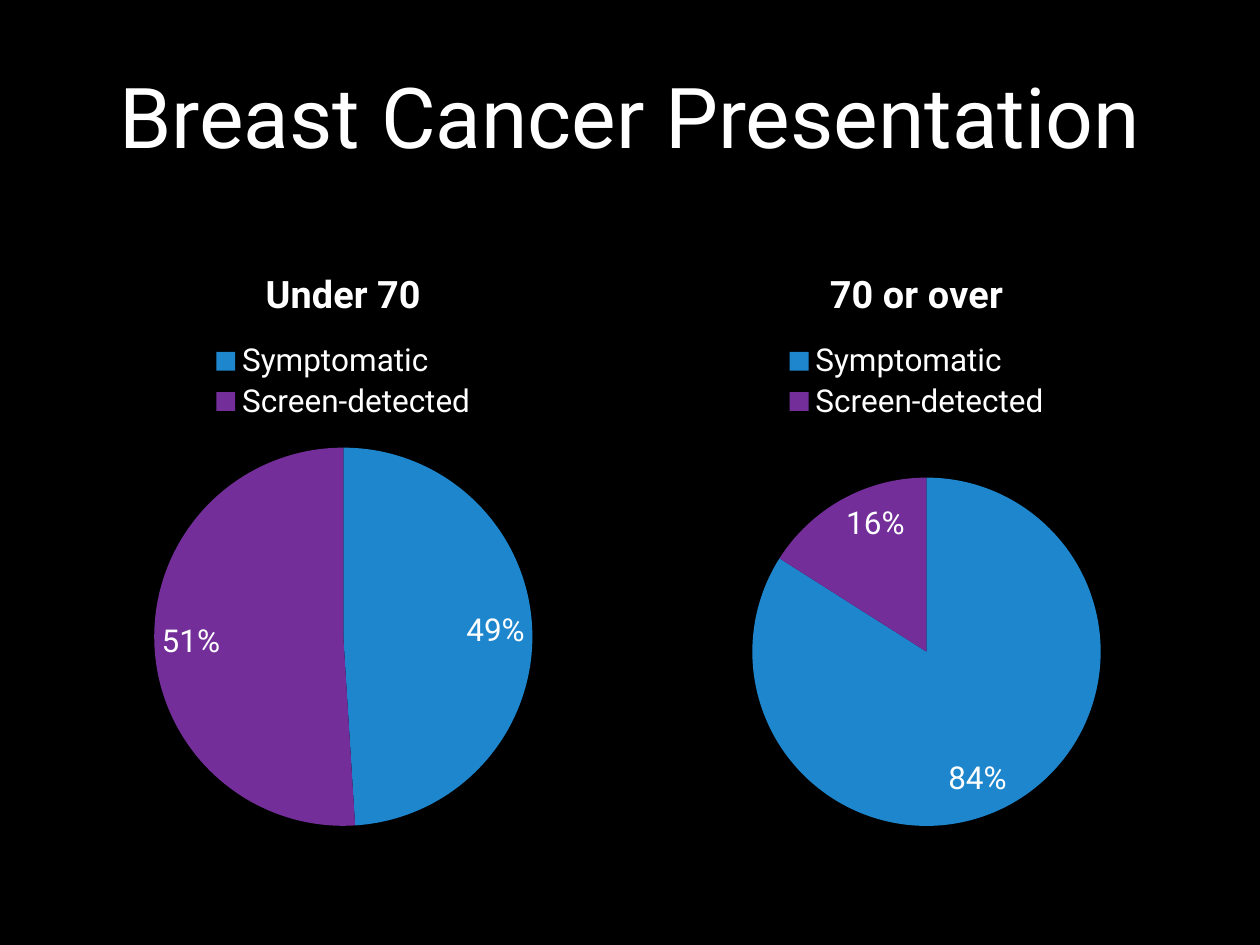
from dataclasses import dataclass

from lxml import etree
from pptx import Presentation
from pptx.chart.data import CategoryChartData
from pptx.dml.color import RGBColor
from pptx.enum.chart import XL_CHART_TYPE as ChartType
from pptx.enum.chart import XL_LABEL_POSITION as LabelPos
from pptx.enum.chart import XL_LEGEND_POSITION as LegendPos
from pptx.enum.text import MSO_ANCHOR as Anchor
from pptx.enum.text import PP_ALIGN as Align
from pptx.oxml.ns import qn
from pptx.util import Inches, Pt


@dataclass(frozen=True)
class Theme:
    background = RGBColor(0x00, 0x00, 0x00)
    text = RGBColor(0xFF, 0xFF, 0xFF)
    slices = (RGBColor(0x1D, 0x86, 0xCD), RGBColor(0x73, 0x2E, 0x9A))
    font = "Roboto"
    heading_size = Pt(48)
    chart_title_size = Pt(21.6)
    chart_size = Pt(18)


theme = Theme()


def style_font(font, **values):
    for name, value in {"name": theme.font, **values}.items():
        setattr(font, name, value)
    font.color.rgb = theme.text


def place(part, index, box, target=None):
    """Fix a chart part at x, y, w, h, as fractions of the chart."""
    for old in part.findall(qn("c:layout")):
        part.remove(old)
    layout = etree.Element(qn("c:layout"))
    manual = etree.SubElement(layout, qn("c:manualLayout"))
    settings = {"layoutTarget": target} if target else {}
    settings |= {"xMode": "edge", "yMode": "edge"}
    settings |= dict(zip("xywh", box))
    for tag, value in settings.items():
        etree.SubElement(manual, qn(f"c:{tag}")).set("val", str(value))
    part.insert(index, layout)


prs = Presentation()
prs.slide_width, prs.slide_height = Inches(10), Inches(7.5)
slide = prs.slides.add_slide(prs.slide_layouts[6])
slide.background.fill.solid()
slide.background.fill.fore_color.rgb = theme.background

# Heading
heading = slide.shapes.add_textbox(Inches(0.75), Inches(0.13), Inches(8.5), Inches(1.56))
frame = heading.text_frame
for name, value in {"word_wrap": True, "vertical_anchor": Anchor.MIDDLE}.items():
    setattr(frame, name, value)
paragraph = frame.paragraphs[0]
paragraph.text = "Breast Cancer Presentation"
paragraph.alignment = Align.CENTER
style_font(paragraph.font, size=theme.heading_size)

# One pie per age group: name, left edge, percentages, plot box
age_groups = [
    ("Under 70", 0.75, (49, 51), (0.12, 0.34, 0.76, 0.63)),
    ("70 or over", 5.3, (84, 16), (0.17, 0.39, 0.7, 0.58)),
]
legend_format = {"position": LegendPos.TOP, "include_in_layout": False}
label_format = {
    "show_percentage": True,
    "show_value": False,
    "number_format": "0%",
    "number_format_is_linked": False,
    "position": LabelPos.INSIDE_END,
}

for group, left, shares, plot_box in age_groups:
    data = CategoryChartData()
    data.categories = ["Symptomatic", "Screen-detected"]
    data.add_series(group, shares)
    chart = slide.shapes.add_chart(
        ChartType.PIE, Inches(left), Inches(1.93), Inches(3.95), Inches(4.77), data
    ).chart
    style_font(chart.font, size=theme.chart_size)

    # Title
    chart.has_title = True
    chart.chart_title.include_in_layout = False
    title = chart.chart_title.text_frame.paragraphs[0]
    title.text = group
    style_font(title.runs[0].font, size=theme.chart_title_size, bold=True)

    # Legend
    chart.has_legend = True
    for name, value in legend_format.items():
        setattr(chart.legend, name, value)
    style_font(chart.legend.font, size=theme.chart_size)
    legend_xml = chart.element.find(".//" + qn("c:legend"))
    place(legend_xml, 1, (0.23, 0.16, 0.54, 0.14))

    # Slices and percentage labels
    pie = chart.plots[0]
    pie.vary_by_categories = True
    pie.has_data_labels = True
    for name, value in label_format.items():
        setattr(pie.data_labels, name, value)
    style_font(pie.data_labels.font, size=theme.chart_size)
    for index, color in enumerate(theme.slices):
        slice_format = pie.series[0].points[index].format
        slice_format.fill.solid()
        slice_format.fill.fore_color.rgb = color
        slice_format.line.fill.background()
    place(chart.element.find(".//" + qn("c:plotArea")), 0, plot_box, "inner")

prs.save("out.pptx")
